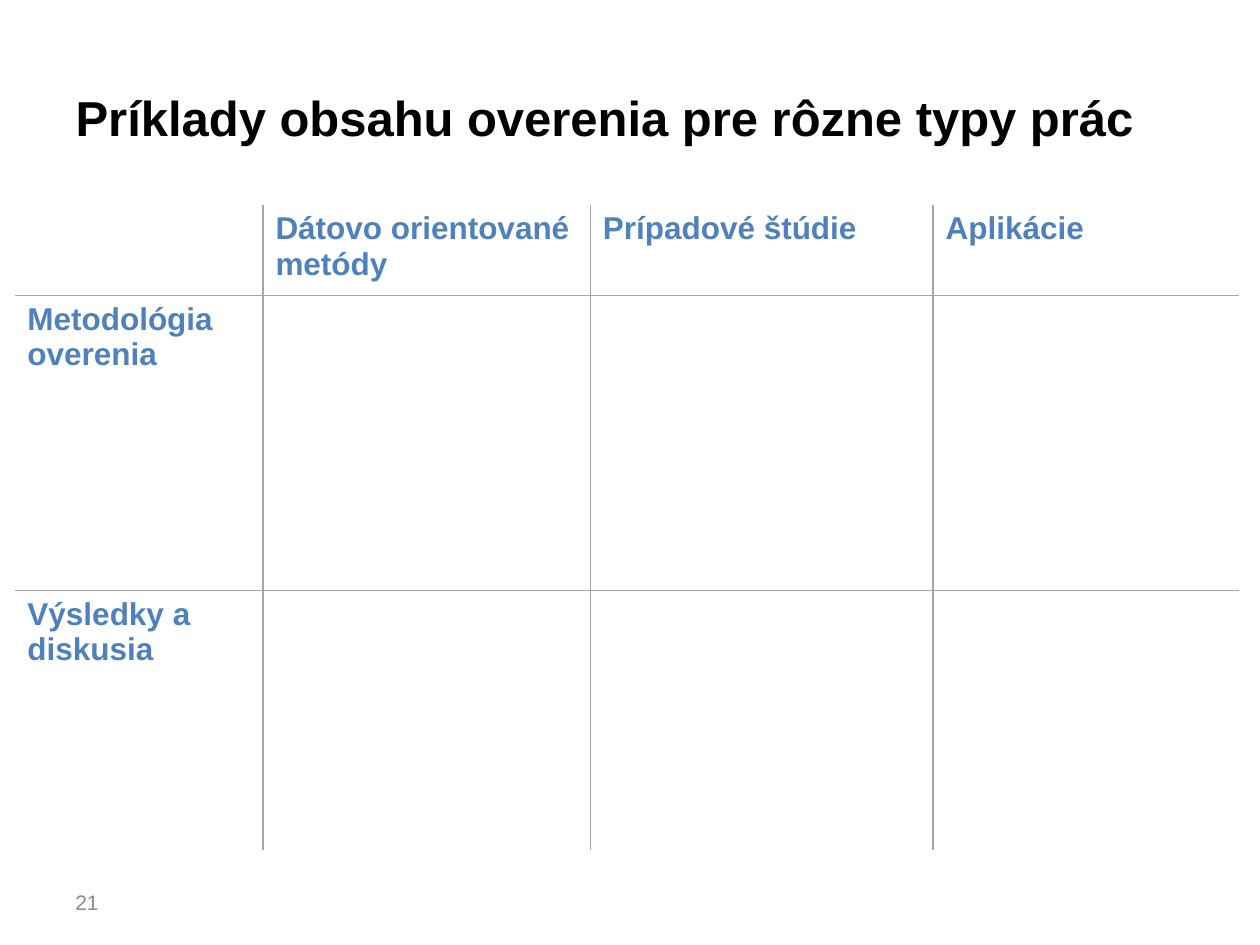
"""Build a slide with a grid of verification content by type of thesis."""
import lxml.etree
import pptx
import pptx.dml.color
import pptx.enum.text
import pptx.oxml.ns
import pptx.util

Cm = pptx.util.Cm
Pt = pptx.util.Pt

HEADING = "Príklady obsahu overenia pre rôzne typy prác"
PAGE_NUMBER = "21"
THESIS_TYPES = ["Dátovo orientované metódy", "Prípadové štúdie", "Aplikácie"]
VERIFICATION_PARTS = ["Metodológia overenia", "Výsledky a diskusia"]

THEME = {
    "heading": {"name": "Arial", "size": Pt(28), "bold": True, "color": "000000"},
    "label": {"name": "Arial", "size": Pt(18), "bold": True, "color": "4F81BD"},
    "page": {"name": "Arial", "size": Pt(12), "bold": False, "color": "8C8C8C"},
    "rule": {"color": "A6A6A6", "width": Pt(1)},
}

SLIDE_SIZE = (25.4, 19.05)
HEADING_BOX = (1.27, 0.76, 22.86, 3.18)
PAGE_BOX = (1.27, 17.68, 5.92, 1.02)
GRID_ORIGIN = (0.3, 4.13)
COLUMN_WIDTHS = [5, 6.6, 6.91, 6.17]
ROW_HEIGHTS = [1.83, 5.94, 5.24]


def write(frame, wording, style, **frame_format):
    for attribute, value in frame_format.items():
        setattr(frame, attribute, value)
    paragraph = frame.paragraphs[0]
    paragraph.alignment = pptx.enum.text.PP_ALIGN.LEFT
    run = paragraph.add_run()
    run.text = wording
    for attribute, value in THEME[style].items():
        if attribute == "color":
            run.font.color.rgb = pptx.dml.color.RGBColor.from_string(value)
        else:
            setattr(run.font, attribute, value)


def rule_cell(cell, sides):
    properties = cell._tc.get_or_add_tcPr()
    qn = pptx.oxml.ns.qn
    for side, visible in sides.items():
        line = lxml.etree.SubElement(properties, qn(f"a:ln{side}"))
        if visible:
            line.set("w", str(THEME["rule"]["width"]))
            fill = lxml.etree.SubElement(line, qn("a:solidFill"))
            lxml.etree.SubElement(fill, qn("a:srgbClr")).set("val", THEME["rule"]["color"])
        else:
            lxml.etree.SubElement(line, qn("a:noFill"))
    cell.fill.background()


def add_grid(slide):
    labels = [["", *THESIS_TYPES]] + [
        [part] + [""] * len(THESIS_TYPES) for part in VERIFICATION_PARTS
    ]
    last_row, last_column = len(ROW_HEIGHTS) - 1, len(COLUMN_WIDTHS) - 1
    extent = (sum(COLUMN_WIDTHS), sum(ROW_HEIGHTS))
    grid = slide.shapes.add_table(
        last_row + 1, last_column + 1, *map(Cm, GRID_ORIGIN + extent)
    ).table
    grid.first_row = grid.horz_banding = False
    for column, width in zip(grid.columns, COLUMN_WIDTHS):
        column.width = Cm(width)
    for row, height in zip(grid.rows, ROW_HEIGHTS):
        row.height = Cm(height)
    for r, row_labels in enumerate(labels):
        for c, label in enumerate(row_labels):
            cell = grid.cell(r, c)
            rule_cell(cell, {"L": c > 0, "R": c < last_column, "T": r > 0, "B": r < last_row})
            if label:
                write(cell.text_frame, label, "label")


def main():
    deck = pptx.Presentation()
    deck.slide_width, deck.slide_height = map(Cm, SLIDE_SIZE)
    slide = deck.slides.add_slide(deck.slide_layouts[5])
    middle = {"vertical_anchor": pptx.enum.text.MSO_ANCHOR.MIDDLE, "word_wrap": True}

    heading = slide.shapes.title
    for attribute, value in zip(("left", "top", "width", "height"), HEADING_BOX):
        setattr(heading, attribute, Cm(value))
    write(heading.text_frame, HEADING, "heading", **middle)

    add_grid(slide)

    page = slide.shapes.add_textbox(*map(Cm, PAGE_BOX))
    write(page.text_frame, PAGE_NUMBER, "page", **middle)
    deck.save("out.pptx")


if __name__ == "__main__":
    main()
